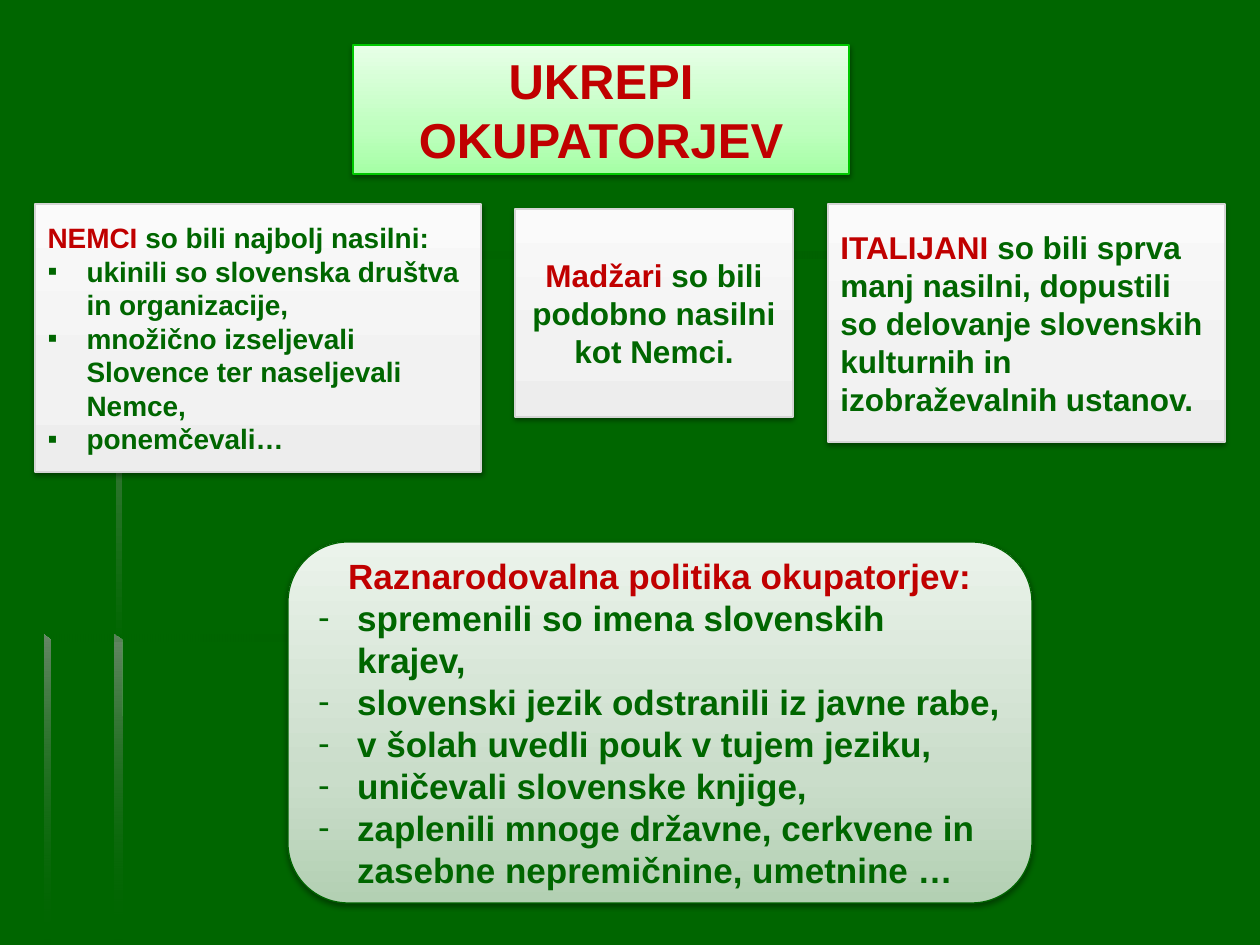
from dataclasses import dataclass
from typing import Optional

from lxml.etree import SubElement
from pptx import Presentation
from pptx.dml.color import RGBColor
from pptx.enum.shapes import MSO_SHAPE
from pptx.enum.text import MSO_ANCHOR, MSO_AUTO_SIZE, PP_ALIGN
from pptx.oxml.ns import qn
from pptx.util import Pt

PX = 914400 / 126  # EMU in one px
WIDTH, HEIGHT = 1260, 945
FONT = "Arial"
HANGING = 39  # px

COLORS = {
    "green": "006600",
    "deep": "005E00",
    "highlight": "668666",
    "red": "C00000",
    "shadow": "000000",
    "bright_line": "00C800",
    "grey_line": "D5D5D5",
    "dark_line": "006400",
}
# Gradient stops at 0, 35 and 100 percent, from bottom to top
BRIGHT = ("A5FFA5", "BFFFBF", "E7FFE7")
GREY = ("EDEDED", "F2F2F2", "FAFAFA")
SAGE = ("B3D0B3", "CADDCA", "EBF3EB")


@dataclass
class Stop:
    position: int
    color: str
    alpha: int = 100


@dataclass
class Decoration:
    points: list[tuple[int, int]]
    stops: Optional[tuple[Stop, Stop]] = None  # None: translucent green
    angle: int = 0


@dataclass
class Line:
    runs: list[tuple[str, str]]  # text, colour name
    centred: bool = False
    bullet: str = ""


@dataclass
class Box:
    place: tuple[int, int, int, int]
    size: int
    lines: list[Line]
    stops: tuple[str, str, str] = GREY
    outline: str = "grey_line"
    geometry: str = "rect"
    placeholder: Optional[int] = None


def emu(px: int) -> int:
    return round(px * PX)


def rgb(name: str) -> RGBColor:
    return RGBColor.from_string(COLORS[name])


def add_color(parent, color: str, alpha: int) -> None:
    element = SubElement(parent, qn("a:srgbClr"), val=color)
    if alpha < 100:
        SubElement(element, qn("a:alpha"), val=str(alpha * 1000))


def fill_gradient(shape, stops, angle: int) -> None:
    """Fill with any number of stops; angle is counter-clockwise."""
    shape.fill.gradient()
    shape.fill.gradient_angle = angle
    stop_list = shape._element.spPr.find(".//" + qn("a:gsLst"))
    for old_stop in list(stop_list):
        stop_list.remove(old_stop)
    for stop in stops:
        element = SubElement(stop_list, qn("a:gs"), pos=str(stop.position * 1000))
        add_color(element, stop.color, stop.alpha)


def add_shadow(shape) -> None:
    shape.shadow.inherit = False
    effects = shape._element.spPr.find(qn("a:effectLst"))
    shadow = SubElement(effects, qn("a:outerShdw"), blurRad=str(Pt(3.1)),
                        dist=str(Pt(1.6)), dir="5400000", rotWithShape="0")
    add_color(shadow, COLORS["shadow"], 38)


def add_decoration(slide, decoration: Decoration, order: int) -> None:
    start, *others = decoration.points
    builder = slide.shapes.build_freeform(*start, scale=PX)
    builder.add_line_segments(others, close=True)
    shape = builder.convert_to_shape()
    shape.shadow.inherit = False
    shape.line.fill.background()
    if decoration.stops:
        fill_gradient(shape, decoration.stops, decoration.angle)
    else:
        shape.fill.solid()
        shape.fill.fore_color.rgb = rgb("green")
        color = shape._element.spPr.find(".//" + qn("a:srgbClr"))
        SubElement(color, qn("a:alpha"), val="30000")
    # Keep the decoration behind the placeholders
    slide.shapes._spTree.insert(2 + order, shape._element)


def write_line(paragraph, line: Line, size: int) -> None:
    paragraph.alignment = PP_ALIGN.CENTER if line.centred else PP_ALIGN.LEFT
    paragraph.space_before = paragraph.space_after = Pt(0)
    paragraph.line_spacing = 1.0
    properties = paragraph._p.get_or_add_pPr()
    indent = emu(HANGING) if line.bullet else 0
    properties.set("marL", str(indent))
    properties.set("indent", str(-indent))
    if line.bullet:
        SubElement(properties, qn("a:buFont"), typeface=FONT)
        SubElement(properties, qn("a:buChar"), char=line.bullet)
    else:
        SubElement(properties, qn("a:buNone"))
    for text, color in line.runs:
        run = paragraph.add_run()
        run.text = text
        run.font.name, run.font.size, run.font.bold = FONT, Pt(size), True
        run.font.color.rgb = rgb(color)


def add_box(slide, box: Box) -> None:
    left, top, width, height = map(emu, box.place)
    if box.placeholder is None:
        shape = slide.shapes.add_shape(MSO_SHAPE.RECTANGLE, left, top, width, height)
    else:
        shape = slide.placeholders[box.placeholder]
        shape.left, shape.top, shape.width, shape.height = left, top, width, height
        geometry = SubElement(shape._element.spPr, qn("a:prstGeom"), prst=box.geometry)
        SubElement(geometry, qn("a:avLst"))
    stops = [Stop(at, color) for at, color in zip((0, 35, 100), box.stops)]
    fill_gradient(shape, stops, 90)
    shape.line.color.rgb = rgb(box.outline)
    shape.line.width = Pt(0.75)
    add_shadow(shape)
    frame = shape.text_frame
    frame.word_wrap = True
    frame.auto_size = MSO_AUTO_SIZE.NONE
    frame.vertical_anchor = MSO_ANCHOR.MIDDLE
    for number, line in enumerate(box.lines):
        paragraph = frame.add_paragraph() if number else frame.paragraphs[0]
        write_line(paragraph, line, box.size)


def bullets(symbol: str, *texts: str) -> list[Line]:
    return [Line([(text, "green")], bullet=symbol) for text in texts]


# Faint grooves of the background
GREEN, DEEP, LIGHT = COLORS["green"], COLORS["deep"], COLORS["highlight"]
ACROSS = (Stop(0, GREEN, 0), Stop(100, DEEP))
DECORATIONS = [
    Decoration([(116, 636), (116, HEIGHT), (WIDTH, HEIGHT), (WIDTH, 636)]),
    Decoration([(118, 638), (45, 638), (45, HEIGHT), (WIDTH, HEIGHT), (WIDTH, 252), (118, 252)]),
    Decoration([(116, 252), (116, 258), (1123, 258), (1123, 252)], ACROSS),
    Decoration([(116, 252), (116, 643), (122, 643), (121, 257)],
               (Stop(0, LIGHT), Stop(100, GREEN)), 270),
    Decoration([(115, HEIGHT), (122, HEIGHT), (121, 640), (115, 635)],
               (Stop(0, LIGHT), Stop(100, GREEN, 0)), 270),
    Decoration([(44, 635), (44, 641), (674, 641), (674, 635)], ACROSS),
    Decoration([(44, 635), (44, HEIGHT), (50, HEIGHT), (50, 641)],
               (Stop(0, LIGHT), Stop(100, GREEN, 10)), 270),
]

BOXES = [
    Box((353, 45, 496, 129), 28, [Line([("UKREPI OKUPATORJEV", "red")], centred=True)],
        BRIGHT, "bright_line", placeholder=0),
    Box((35, 204, 446, 268), 16,
        [Line([("NEMCI", "red"), (" so bili najbolj nasilni:", "green")]),
         *bullets("▪", "ukinili so slovenska društva in organizacije,",
                  "množično izseljevali Slovence ter naseljevali Nemce,", "ponemčevali…")],
        placeholder=1),
    Box((828, 204, 397, 238), 18,
        [Line([("ITALIJANI", "red"),
               (" so bili sprva manj nasilni, dopustili so delovanje slovenskih "
                "kulturnih in izobraževalnih ustanov.", "green")])]),
    Box((515, 209, 278, 208), 18,
        [Line([("Madžari", "red"), (" so bili podobno nasilni kot Nemci.", "green")],
              centred=True)]),
    Box((288, 542, 744, 361), 20,
        [Line([("Raznarodovalna politika okupatorjev:", "red")], centred=True),
         *bullets("-", "spremenili so imena slovenskih krajev,",
                  "slovenski jezik odstranili iz javne rabe,",
                  "v šolah uvedli pouk v tujem jeziku,", "uničevali slovenske knjige,",
                  "zaplenili mnoge državne, cerkvene in zasebne nepremičnine, umetnine …")],
        SAGE, "dark_line", "roundRect", placeholder=2),
]


def main() -> None:
    presentation = Presentation()
    presentation.slide_width, presentation.slide_height = emu(WIDTH), emu(HEIGHT)
    slide = presentation.slides.add_slide(presentation.slide_layouts[3])
    slide.background.fill.solid()
    slide.background.fill.fore_color.rgb = rgb("green")
    for order, decoration in enumerate(DECORATIONS):
        add_decoration(slide, decoration, order)
    for box in BOXES:
        add_box(slide, box)
    presentation.save("out.pptx")


if __name__ == "__main__":
    main()
